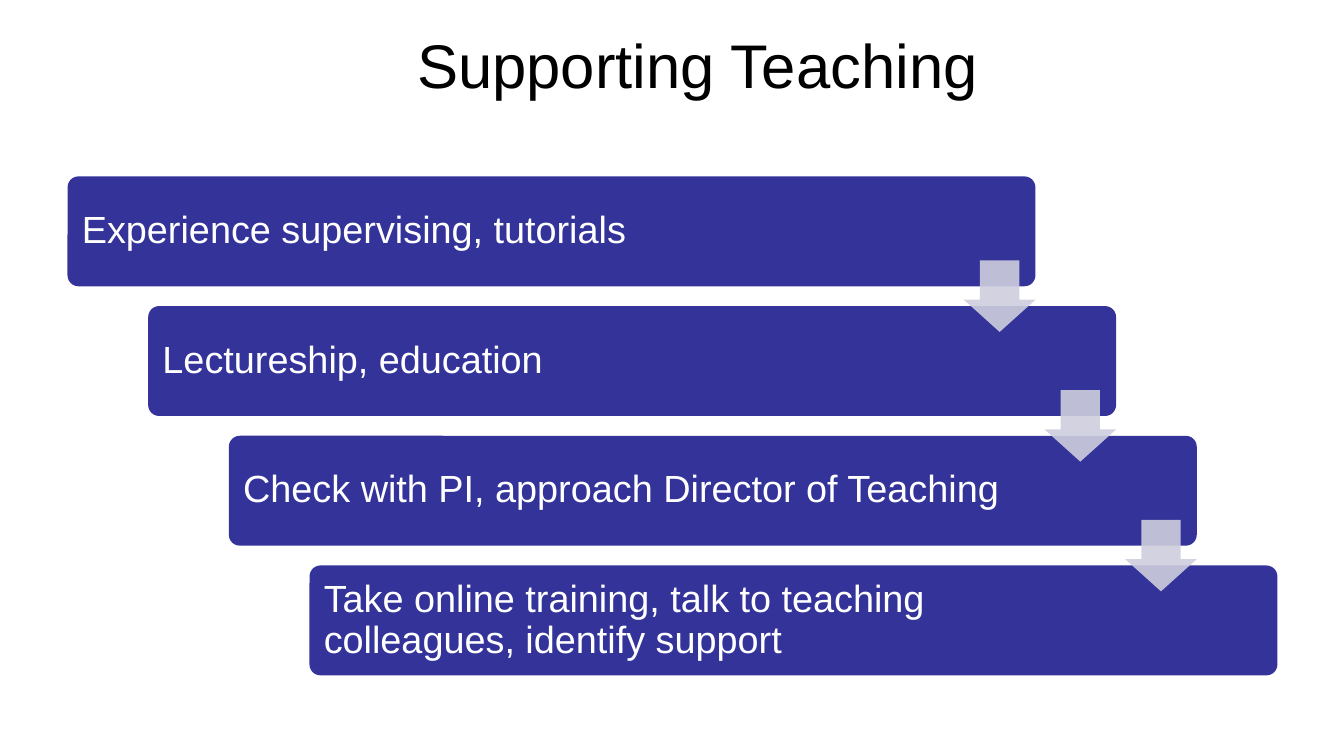
from dataclasses import dataclass
from pptx import Presentation
from pptx.dml.color import RGBColor
from pptx.enum.shapes import MSO_SHAPE
from pptx.enum.text import MSO_ANCHOR, PP_ALIGN
from pptx.oxml.ns import qn
from pptx.util import Inches, Pt
from lxml.etree import SubElement


@dataclass
class Theme:
    font: str = "Arial"
    dark: RGBColor = RGBColor(0, 0, 0)
    light: RGBColor = RGBColor(0xFF, 0xFF, 0xFF)
    bar: RGBColor = RGBColor(0x33, 0x33, 0x99)
    arrow: RGBColor = RGBColor(0xCE, 0xCE, 0xDE)
    head: Pt = Pt(44)
    body: Pt = Pt(27)


theme = Theme()


def write(frame, text, size, color, align):
    frame.text = text
    frame.word_wrap = True
    frame.vertical_anchor = MSO_ANCHOR.MIDDLE
    para = frame.paragraphs[0]
    para.alignment = align
    font = para.runs[0].font
    font.name, font.size, font.color.rgb = theme.font, size, color
    return para


def draw(kind, left, top, width, height, fill):
    shape = slide.shapes.add_shape(
        kind, Inches(left), Inches(top), Inches(width), Inches(height))
    shape.shadow.inherit = False
    shape.fill.solid()
    shape.fill.fore_color.rgb = fill
    shape.line.fill.background()
    return shape


prs = Presentation()
prs.slide_width, prs.slide_height = Inches(13.33), Inches(7.5)
slide = prs.slides.add_slide(prs.slide_layouts[5])

title = slide.shapes.title
title.left, title.top = Inches(0.92), Inches(0.01)
title.width, title.height = Inches(12), Inches(1.25)
write(title.text_frame, "Supporting Teaching", theme.head, theme.dark, PP_ALIGN.CENTER)

steps = [
    "Experience supervising, tutorials",
    "Lectureship, education",
    "Check with PI, approach Director of Teaching",
    "Take online training, talk to teaching colleagues, identify support",
]
left, top, width, height = 0.67, 1.75, 9.6, 1.09
shift, drop = 0.8, 3.86 / 3
size = 0.71

for i, text in enumerate(steps):
    bar = draw(MSO_SHAPE.ROUNDED_RECTANGLE, left + i * shift, top + i * drop,
               width, height, theme.bar)
    bar.adjustments[0] = 0.1
    frame = bar.text_frame
    frame.margin_left = frame.margin_top = frame.margin_bottom = Inches(0.11)
    frame.margin_right = Inches(1.63)
    para = write(frame, text, theme.body, theme.light, PP_ALIGN.LEFT)
    para.line_spacing = 0.9

mid = top + (height + drop) / 2
for i in range(len(steps) - 1):
    arrow = draw(MSO_SHAPE.DOWN_ARROW, left + width - size + i * shift,
                 mid - size / 2 + i * drop, size, size, theme.arrow)
    arrow.adjustments[0], arrow.adjustments[1] = 0.55, 0.45
    tint = arrow.fill._xPr.find(qn("a:solidFill"))[0]
    SubElement(tint, qn("a:alpha")).set("val", "90000")

prs.save("out.pptx")
